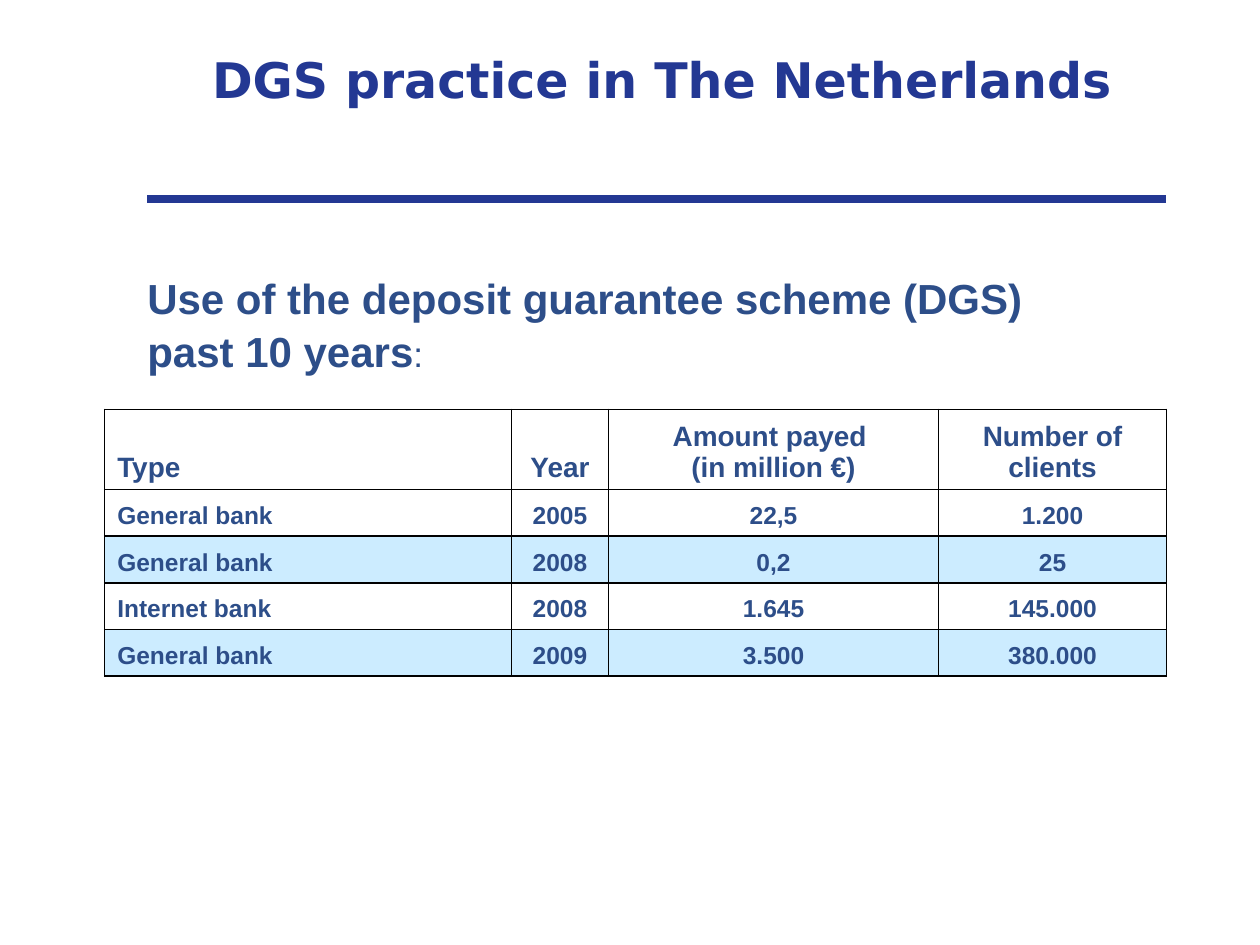
"""Build a slide on the use of the deposit guarantee scheme."""
import pptx
import pptx.dml.color
import pptx.enum.shapes
import pptx.enum.text
import pptx.oxml
import pptx.oxml.ns
import pptx.util

Cm = pptx.util.Cm
Pt = pptx.util.Pt
RGB = pptx.dml.color.RGBColor
ALIGN = pptx.enum.text.PP_ALIGN
ANCHOR = pptx.enum.text.MSO_ANCHOR
NAVY = RGB(0x23, 0x38, 0x93)
BLUE = RGB(0x2D, 0x4E, 0x89)
PALE = RGB(0xCC, 0xEC, 0xFF)
WHITE = RGB(0xFF, 0xFF, 0xFF)
BLACK = RGB(0, 0, 0)

ROWS = [
    ("Type", "Year", "Amount payed \v(in million €)", "Number of clients"),
    ("General bank", "2005", "22,5", "1.200"),
    ("General bank", "2008", "0,2", "25"),
    ("Internet bank", "2008", "1.645", "145.000"),
    ("General bank", "2009", "3.500", "380.000"),
]
WIDTHS = [8.2, 1.96, 6.65, 4.6]


def style(font, size, color, name="Arial", bold=True):
    font.name = name
    font.size = Pt(size)
    font.bold = bold
    font.color.rgb = color


def border(cell):
    props = cell._tc.get_or_add_tcPr()
    for spot, side in enumerate("LRTB"):
        line = pptx.oxml.parse_xml(
            f'<a:ln{side} {pptx.oxml.ns.nsdecls("a")} w="{Pt(1)}">'
            f'<a:solidFill><a:srgbClr val="{BLACK}"/></a:solidFill></a:ln{side}>'
        )
        props.insert(spot, line)


deck = pptx.Presentation()
deck.slide_width = Cm(25.4)
deck.slide_height = Cm(19.05)
slide = deck.slides.add_slide(deck.slide_layouts[5])
shapes = slide.shapes

rule = shapes.add_connector(
    pptx.enum.shapes.MSO_CONNECTOR.STRAIGHT, Cm(2.97), Cm(4.02), Cm(23.5), Cm(4.02)
)
rule.line.color.rgb = NAVY
rule.line.width = Pt(4.5)
rule._element.spPr.append(
    pptx.oxml.parse_xml(f'<a:effectLst {pptx.oxml.ns.nsdecls("a")}/>')
)

title = shapes.title
title.left, title.top = Cm(4.02), Cm(0.43)
title.width, title.height = Cm(18.85), Cm(2.33)
title.text_frame.text = "DGS practice in The Netherlands"
title.text_frame.vertical_anchor = ANCHOR.MIDDLE
head = title.text_frame.paragraphs[0]
head.alignment = ALIGN.LEFT
style(head.font, 28, NAVY, "DejaVu Sans")

frame = shapes.add_table(
    len(ROWS), len(WIDTHS), Cm(2.11), Cm(8.25), Cm(sum(WIDTHS)), Cm(5.38)
)
table = frame.table
table.first_row = False
table.horz_banding = False
for col, width in zip(table.columns, WIDTHS):
    col.width = Cm(width)
for r, texts in enumerate(ROWS):
    table.rows[r].height = Cm(0.94 if r else 1.62)
    for c, text in enumerate(texts):
        cell = table.cell(r, c)
        cell.text = text
        cell.vertical_anchor = ANCHOR.BOTTOM
        cell.fill.solid()
        cell.fill.fore_color.rgb = PALE if r and r % 2 == 0 else WHITE
        border(cell)
        for para in cell.text_frame.paragraphs:
            para.alignment = ALIGN.CENTER if c else ALIGN.LEFT
            style(para.font, 14 if r else 16, BLUE)

box = shapes.add_textbox(Cm(2.72), Cm(5.3), Cm(20.75), Cm(3.18))
box.text_frame.word_wrap = True
para = box.text_frame.paragraphs[0]
para.line_spacing = 1.06
para.text = "Use of the deposit guarantee scheme (DGS)\vpast 10 years"
for run in para.runs:
    style(run.font, 24, BLUE)
colon = para.add_run()
colon.text = ":"
style(colon.font, 20, BLUE, bold=False)

deck.save("out.pptx")
